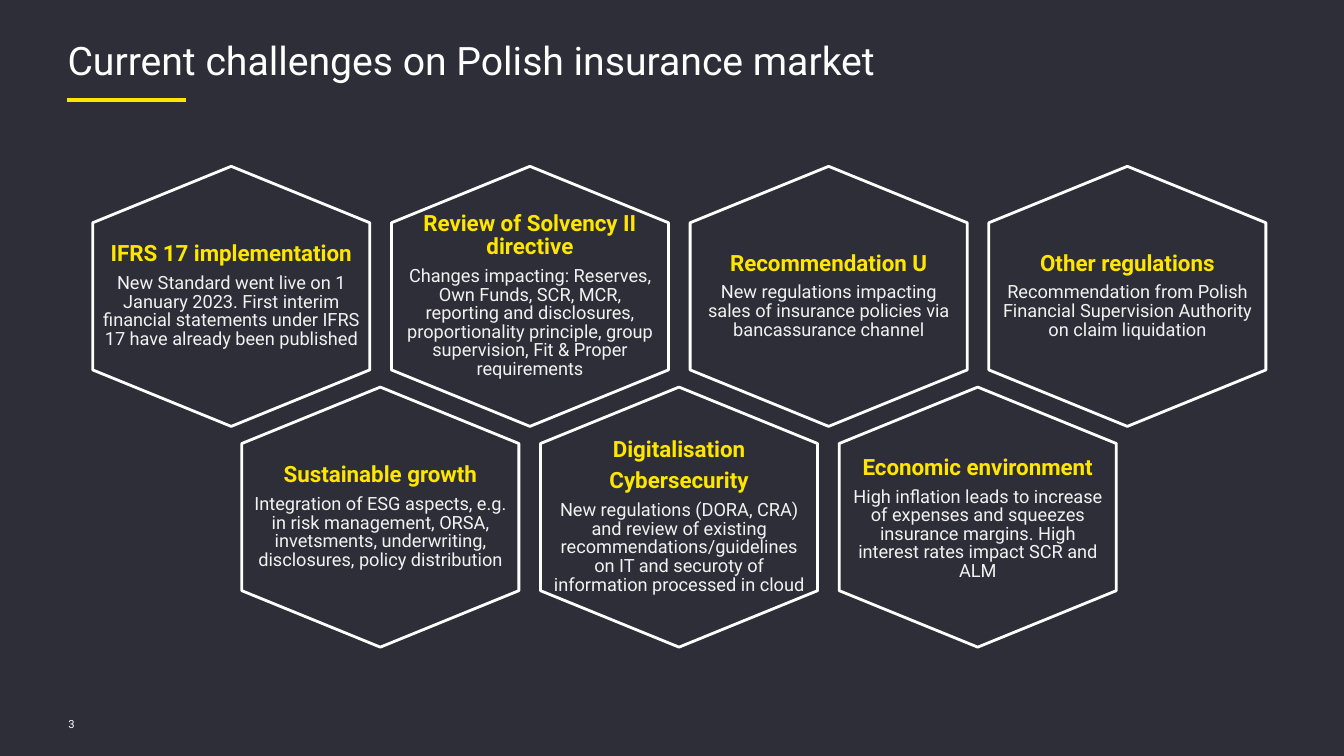
from lxml import etree
from pptx import Presentation, util as u
from pptx.dml.color import RGBColor
from pptx.enum import shapes, text
from pptx.oxml import ns

DARK = RGBColor(0x2E, 0x2E, 0x38)
YELLOW = RGBColor(0xFF, 0xE6, 0x00)
WHITE = RGBColor(0xFF, 0xFF, 0xFF)
PALE = RGBColor(0xF2, 0xF2, 0xF2)

HEX_WIDTH, HEX_HEIGHT, HEX_SHOULDER = 2.75, 2.58, 0.56
PITCH = 2.965

UPPER_ROW = [
    (["IFRS 17 implementation"],
     "New Standard went live on 1 January 2023. First interim financial "
     "statements under IFRS 17 have already been published", 0.85),
    (["Review of Solvency II directive"],
     "Changes impacting: Reserves, Own Funds, SCR, MCR, reporting and disclosures, "
     "proportionality principle, group supervision, Fit & Proper requirements", 0.85),
    (["Recommendation U"],
     "New regulations impacting sales of insurance policies via "
     "bancassurance channel", 0.85),
    (["Other regulations"],
     "Recommendation from Polish Financial Supervision Authority on "
     "claim liquidation", 0.85),
]
LOWER_ROW = [
    (["Sustainable growth"],
     "Integration of ESG aspects, e.g. in risk management, ORSA, invetsments, "
     "underwriting, disclosures, policy distribution", 0.85),
    (["Digitalisation", "Cybersecurity"],
     "New regulations (DORA, CRA) and review of existing recommendations/guidelines "
     "on IT and securoty of information processed in cloud", 0.85),
    (["Economic environment"],
     "High inflation leads to increase of expenses and squeezes insurance margins. "
     "High interest rates impact SCR and ALM", 1.0),
]
ROWS = [(0.92, 1.65, UPPER_ROW), (2.4, 3.84, LOWER_ROW)]


def write(paragraph, words, size, color=WHITE, bold=False,
          align=text.PP_ALIGN.LEFT, spacing=1.0, after=0):
    paragraph.alignment = align
    paragraph.line_spacing = spacing
    paragraph.space_before = u.Pt(0)
    paragraph.space_after = u.Pt(after)
    run = paragraph.add_run()
    run.text = words
    run.font.name = "Roboto"
    run.font.size = u.Pt(size)
    run.font.bold = bold
    run.font.color.rgb = color


class ChallengeSlide:
    def __init__(self, deck):
        self.slide = deck.slides.add_slide(deck.slide_layouts[5])
        self.shapes = self.slide.shapes
        background = self.slide.background.fill
        background.solid()
        background.fore_color.rgb = DARK

    def frame(self, shape, anchor, side=0):
        frame = shape.text_frame
        frame.word_wrap = True
        frame.auto_size = text.MSO_AUTO_SIZE.NONE
        frame.vertical_anchor = anchor
        frame.margin_left = frame.margin_right = u.Inches(side)
        frame.margin_top = frame.margin_bottom = 0
        return frame

    def title(self, words):
        heading = self.shapes.title
        heading.left, heading.top = u.Inches(0.67), u.Inches(0.43)
        heading.width, heading.height = u.Inches(12), u.Inches(0.65)
        frame = self.frame(heading, text.MSO_ANCHOR.TOP)
        write(frame.paragraphs[0], words, 28, spacing=0.85)

    def rule(self, left, right, y):
        accent = self.shapes.add_connector(
            shapes.MSO_CONNECTOR.STRAIGHT,
            u.Inches(left), u.Inches(y), u.Inches(right), u.Inches(y))
        accent.line.color.rgb = YELLOW
        accent.line.width = u.Pt(3)
        etree.SubElement(accent._element.spPr, ns.qn("a:effectLst"))

    def page_number(self, number):
        label = self.shapes.add_textbox(
            u.Inches(0.68), u.Inches(7.08), u.Inches(0.73), u.Inches(0.2))
        write(self.frame(label, text.MSO_ANCHOR.MIDDLE).paragraphs[0], number, 8)

    def hexagon(self, left, top, headings, details, heading_spacing):
        middle, right = left + HEX_WIDTH / 2, left + HEX_WIDTH
        bottom = top + HEX_HEIGHT
        upper, lower = top + HEX_SHOULDER, bottom - HEX_SHOULDER
        corners = [(middle, top), (right, upper), (right, lower),
                   (middle, bottom), (left, lower), (left, upper)]
        points = [(u.Inches(x), u.Inches(y)) for x, y in corners]
        outline = self.shapes.build_freeform(*points[0])
        outline.add_line_segments(points[1:], close=True)
        challenge = outline.convert_to_shape()
        challenge.shadow.inherit = False
        challenge.fill.background()
        challenge.line.color.rgb = WHITE
        challenge.line.width = u.Pt(2)

        frame = self.frame(challenge, text.MSO_ANCHOR.MIDDLE, side=0.1)
        paragraph = frame.paragraphs[0]
        for heading in headings:
            write(paragraph, heading, 16, YELLOW, bold=True,
                  align=text.PP_ALIGN.CENTER, spacing=heading_spacing, after=6)
            paragraph = frame.add_paragraph()
        write(paragraph, details, 13, PALE,
              align=text.PP_ALIGN.CENTER, spacing=0.85, after=6)


def main():
    deck = Presentation()
    deck.slide_width, deck.slide_height = u.Inches(13.34), u.Inches(7.5)
    page = ChallengeSlide(deck)
    page.title("Current challenges on Polish insurance market")
    page.rule(0.67, 1.85, 0.99)
    page.page_number("3")
    for left, top, challenges in ROWS:
        for column, challenge in enumerate(challenges):
            page.hexagon(left + column * PITCH, top, *challenge)
    deck.save("out.pptx")


if __name__ == "__main__":
    main()
